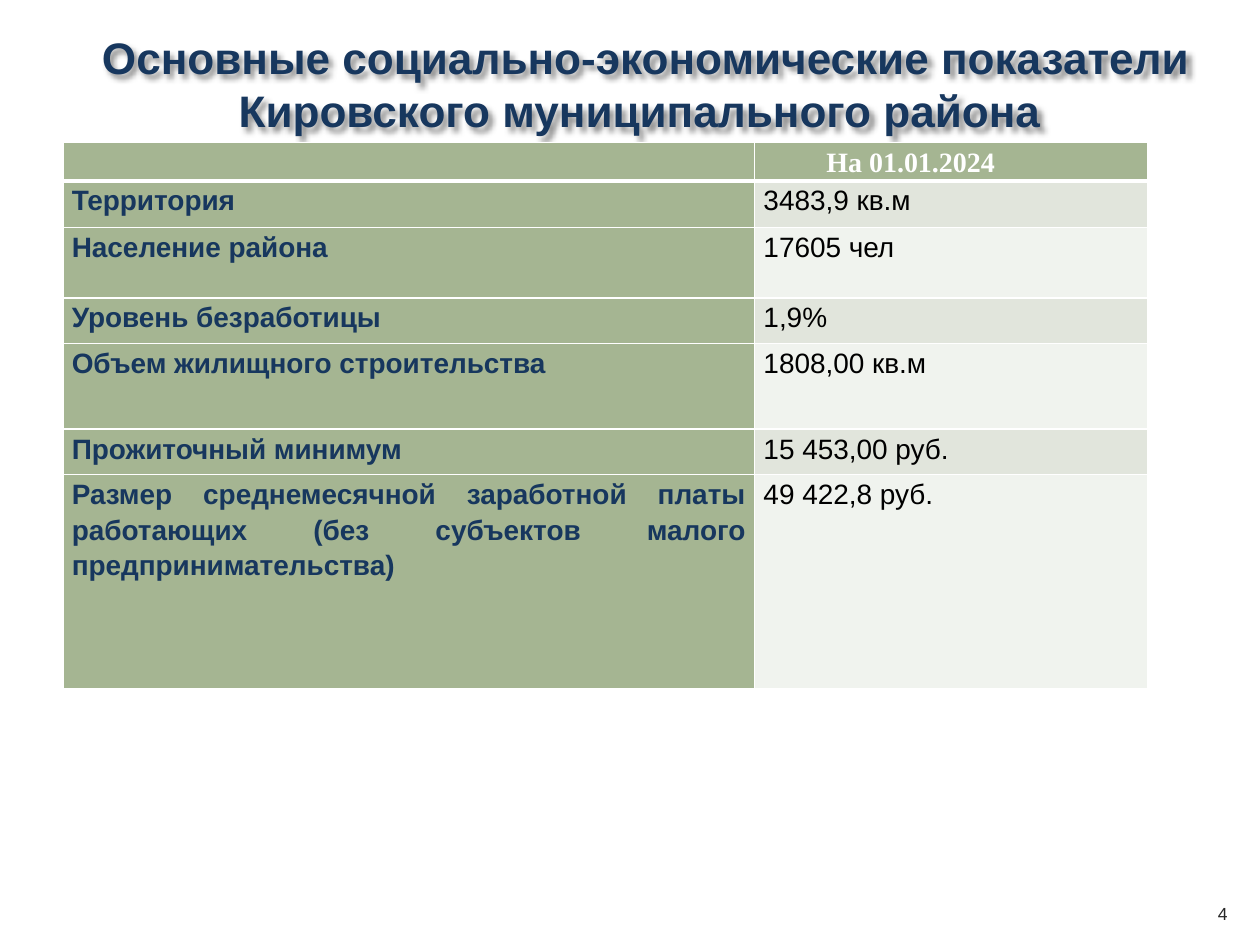
from lxml import etree
from pptx import Presentation
from pptx.dml.color import RGBColor
from pptx.enum import text as t
from pptx.oxml import parse_xml
from pptx.oxml.ns import qn
from pptx.util import Inches, Pt

TITLE = "Основные социально-экономические показатели Кировского муниципального района "
PAGE = "4"
HEADING = "На 01.01.2024"
INDICATORS = [
    ("Территория", "3483,9 кв.м", 0.37),
    ("Население района", "17605 чел", 0.56),
    ("Уровень безработицы", "1,9%", 0.36),
    ("Объем жилищного строительства ", "1808,00 кв.м", 0.68),
    ("Прожиточный минимум ", "15 453,00 руб.", 0.36),
    ("Размер среднемесячной заработной платы работающих "
     "(без субъектов малого предпринимательства) ", "49 422,8 руб.", 1.7),
]
COLUMNS = (5.49, 3.12)
HEADER_HEIGHT = 0.27
THEME = {
    "navy": "17375E", "white": "FFFFFF", "black": "000000", "page": "262626",
    "green": "A5B592", "bands": ("E1E5DC", "F0F3EE"),
    "title_size": 25.2, "table_size": 16, "page_size": 10,
    "sans": "Arial", "serif": "Times New Roman",
}
DRAWING = "http://schemas.openxmlformats.org/drawingml/2006/main"
SHADOW = (f'<a:effectLst xmlns:a="{DRAWING}"><a:outerShdw blurRad="38100" dist="38100" '
          'dir="2700000" algn="tl"><a:srgbClr val="000000"><a:alpha val="43000"/>'
          '</a:srgbClr></a:outerShdw></a:effectLst>')


def write(frame, words, size, color, font=THEME["sans"], bold=False,
          align=t.PP_ALIGN.CENTER, spacing=None, indent=0):
    """Write one formatted paragraph into a text frame."""
    frame.word_wrap = True
    line = frame.paragraphs[0]
    line.alignment = align
    if spacing:
        line.line_spacing = spacing
    if indent:
        properties = line._p.get_or_add_pPr()
        properties.set("marL", "0")
        properties.set("indent", str(Inches(indent)))
    if not words:
        etree.SubElement(line._p, qn("a:endParaRPr"), sz=str(size * 100))
        return
    run = line.add_run()
    run.text = words
    run.font.size, run.font.name, run.font.bold = Pt(size), font, bold
    run.font.color.rgb = RGBColor.from_string(color)


def add_label(slide, box, words, **style):
    """Add a vertically centred text box."""
    label = slide.shapes.add_textbox(*map(Inches, box))
    label.text_frame.vertical_anchor = t.MSO_ANCHOR.MIDDLE
    write(label.text_frame, words, **style)
    return label


def fill_cell(cell, words, fill, borders, **style):
    """Set the text, margins, borders and fill of a table cell."""
    cell.margin_left = cell.margin_right = Inches(0.07)
    cell.margin_top = cell.margin_bottom = 0
    write(cell.text_frame, words, size=THEME["table_size"], spacing=1.15, **style)
    properties = cell._tc.get_or_add_tcPr()
    for side, width in borders.items():
        edge = etree.SubElement(properties, qn(f"a:ln{side}"), w=str(Pt(width)))
        solid = etree.SubElement(edge, qn("a:solidFill"))
        etree.SubElement(solid, qn("a:srgbClr"), val=THEME["white"])
    cell.fill.solid()
    cell.fill.fore_color.rgb = RGBColor.from_string(fill)


def add_indicators(slide):
    """Build the indicator table."""
    heights = [HEADER_HEIGHT] + [height for _, _, height in INDICATORS]
    frame = slide.shapes.add_table(
        len(heights), len(COLUMNS),
        *map(Inches, (0.5, 1.13, sum(COLUMNS), sum(heights))))
    table = frame.table
    for column, width in zip(table.columns, COLUMNS):
        column.width = Inches(width)
    for row, height in zip(table.rows, heights):
        row.height = Inches(height)

    justify = t.PP_ALIGN.JUSTIFY
    header_edges = {"L": 1, "R": 1, "T": 1, "B": 3}
    for column, words in enumerate(("", HEADING)):
        fill_cell(table.cell(0, column), words, THEME["green"], header_edges,
                  color=THEME["white"], font=THEME["serif"], bold=True,
                  align=justify, indent=0.5 * column)
    for row, (indicator, value, _) in enumerate(INDICATORS, 1):
        edges = {"L": 1, "R": 1, "T": 3 if row == 1 else 1, "B": 1}
        fill_cell(table.cell(row, 0), indicator, THEME["green"], edges,
                  color=THEME["navy"], bold=True, align=justify)
        fill_cell(table.cell(row, 1), value, THEME["bands"][(row - 1) % 2], edges,
                  color=THEME["black"], align=justify)


def main():
    """Build and save the slide."""
    deck = Presentation()
    deck.slide_width, deck.slide_height = Inches(10), Inches(7.5)
    slide = deck.slides.add_slide(deck.slide_layouts[6])
    title = add_label(slide, (0.5, 0.18, 9.25, 0.97), TITLE, bold=True,
                      size=THEME["title_size"], color=THEME["navy"])
    title._element.spPr.append(parse_xml(SHADOW))
    add_indicators(slide)
    add_label(slide, (9.45, 7.05, 0.51, 0.4), PAGE,
              size=THEME["page_size"], color=THEME["page"])
    deck.save("out.pptx")


if __name__ == "__main__":
    main()
